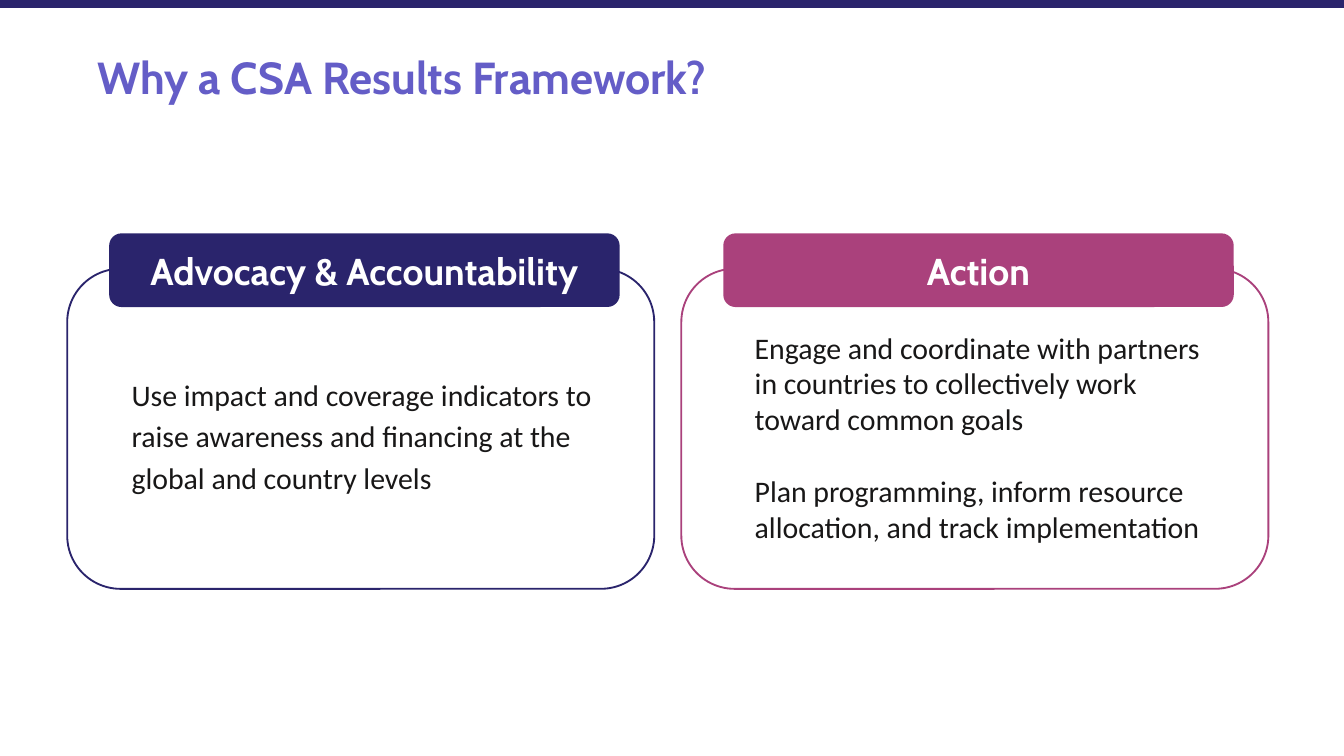
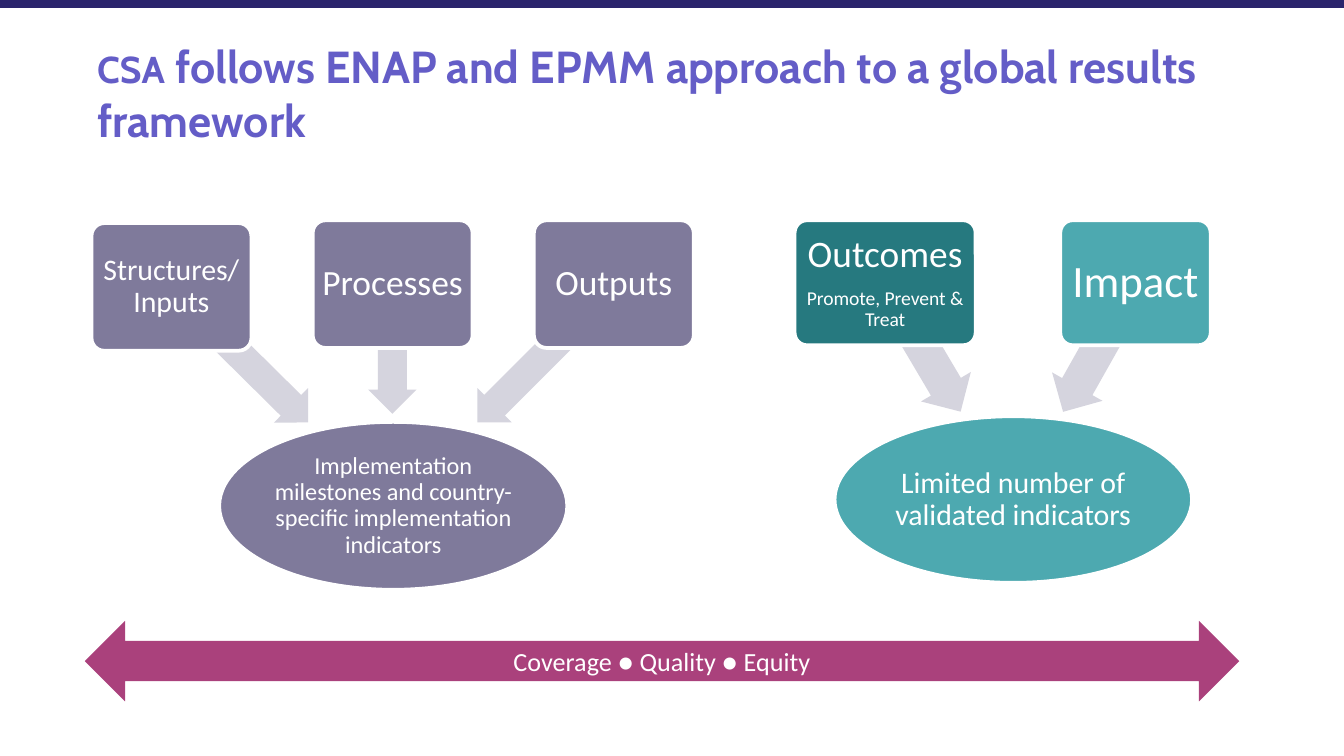
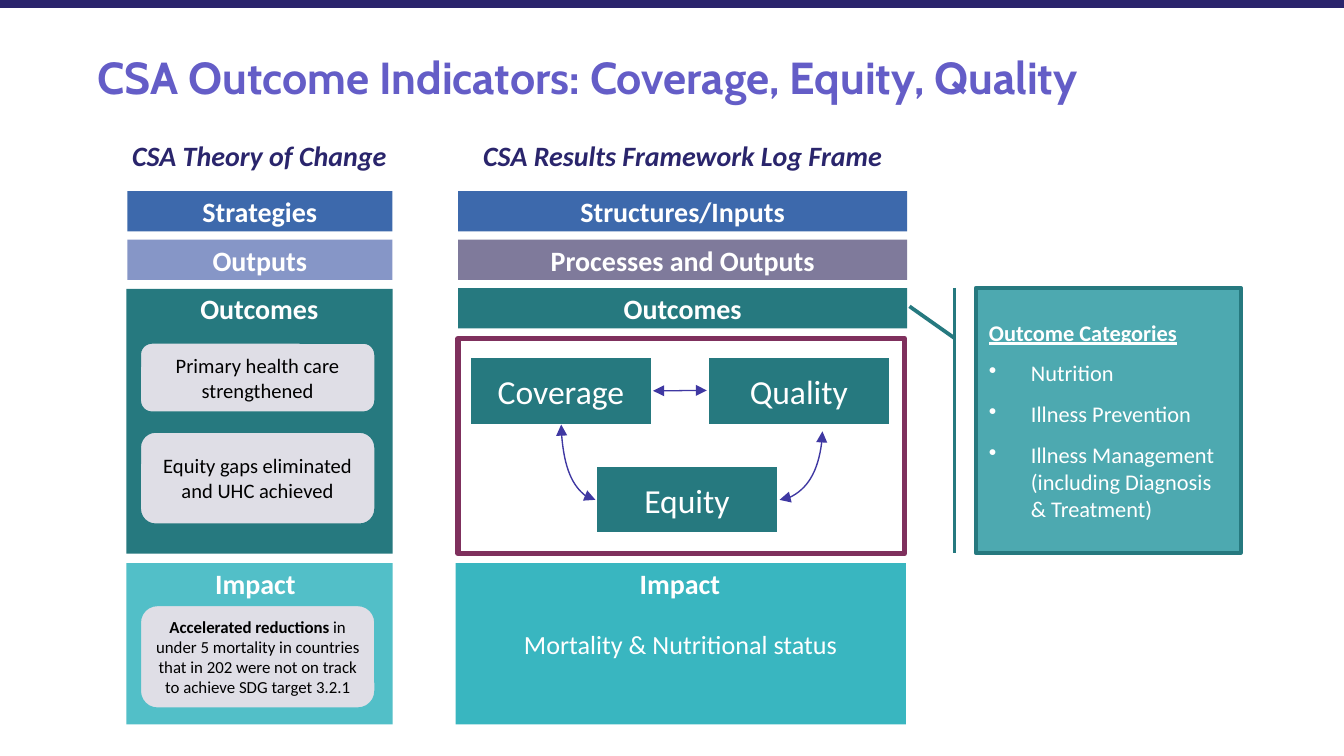
from dataclasses import dataclass
from typing import Optional

from lxml import etree
from pptx import Presentation
from pptx.dml.color import RGBColor
from pptx.enum.shapes import MSO_CONNECTOR, MSO_SHAPE
from pptx.enum.text import MSO_ANCHOR, PP_ALIGN
from pptx.oxml.ns import qn
from pptx.util import Pt

RECT = MSO_SHAPE.RECTANGLE
ROUND = MSO_SHAPE.ROUNDED_RECTANGLE
OVAL = MSO_SHAPE.OVAL
LEFT_ARROW = MSO_SHAPE.LEFT_ARROW
DOUBLE_ARROW = MSO_SHAPE.LEFT_RIGHT_ARROW
CALLOUT = MSO_SHAPE.LINE_CALLOUT_1_BORDER_AND_ACCENT_BAR
CURVE = MSO_CONNECTOR.CURVE
LEFT = PP_ALIGN.LEFT
CENTER = PP_ALIGN.CENTER
TOP = MSO_ANCHOR.TOP
MIDDLE = MSO_ANCHOR.MIDDLE

COLORS = {
    "white": "FFFFFF",
    "black": "000000",
    "ink": "181717",
    "navy": "2A246C",
    "heading": "2A256C",
    "title": "645DC7",
    "magenta": "AA417C",
    "plum": "7F305D",
    "mauve": "7F7A9B",
    "lilac": "D5D4DE",
    "pale": "DFDEE6",
    "teal": "26797F",
    "aqua": "4DA9B0",
    "cyan": "39B6C0",
    "light_cyan": "53BFC8",
    "blue": "3D69AC",
    "periwinkle": "8696C7",
    "indigo": "3F38A2",
}
HEAD_FONT = "Cabin"
BODY_FONT = "Calibri"
TIGHT = (5.2, 2.7, 5.2, 2.7)
WIDE = (7.2, 7.2, 7.2, 7.2)


@dataclass
class Run:
    text: str
    size: float
    color: str = "white"
    bold: bool = False
    italic: bool = False
    underline: bool = False
    font: str = BODY_FONT


@dataclass
class Para:
    runs: tuple[Run, ...]
    align: PP_ALIGN = CENTER
    before: float = 0
    after: float = 0
    spacing: float = 1.0
    indent: float = 0
    bullet: bool = False


@dataclass
class Box:
    x: float
    y: float
    w: float
    h: float
    kind: Optional[MSO_SHAPE] = None
    fill: Optional[str] = None
    line: Optional[str] = None
    weight: float = 1
    adj: tuple[float, ...] = ()
    rotation: float = 0
    alpha: int = 100
    paras: tuple[Para, ...] = ()
    inset: tuple[float, ...] = (7.2, 3.6, 7.2, 3.6)


@dataclass
class Curve:
    x1: float
    y1: float
    x2: float
    y2: float
    preset: str


def rgb(name: str) -> RGBColor:
    return RGBColor.from_string(COLORS[name])


def single(run: Run, **layout) -> tuple[Para, ...]:
    return (Para((run,), **layout),)


def write_para(p, para: Para) -> None:
    p.alignment = para.align
    p.line_spacing = para.spacing
    p.space_before = Pt(para.before)
    p.space_after = Pt(para.after)
    pPr = p._p.get_or_add_pPr()
    pPr.set("marL", str(Pt(para.indent)))
    pPr.set("indent", str(-Pt(para.indent) if para.bullet else 0))
    if para.bullet:
        etree.SubElement(pPr, qn("a:buChar")).set("char", "•")
    for run in para.runs:
        r = p.add_run()
        r.text = run.text
        r.font.name = run.font
        r.font.size = Pt(run.size)
        r.font.bold = run.bold
        r.font.italic = run.italic
        r.font.underline = run.underline
        r.font.color.rgb = rgb(run.color)


def write_text(tf, box: Box) -> None:
    tf.word_wrap = True
    tf.vertical_anchor = MIDDLE if box.kind else TOP
    tf.margin_left, tf.margin_top, tf.margin_right, tf.margin_bottom = map(Pt, box.inset)
    for i, para in enumerate(box.paras):
        write_para(tf.add_paragraph() if i else tf.paragraphs[0], para)


def draw_box(s, box: Box) -> None:
    place = [Pt(v) for v in (box.x, box.y, box.w, box.h)]
    if box.kind is None:
        write_text(s.shapes.add_textbox(*place).text_frame, box)
        return
    sp = s.shapes.add_shape(box.kind, *place)
    sp.shadow.inherit = False
    sp.rotation = box.rotation
    for i, value in enumerate(box.adj):
        sp.adjustments[i] = value
    if box.fill:
        sp.fill.solid()
        sp.fill.fore_color.rgb = rgb(box.fill)
    else:
        sp.fill.background()
    if box.alpha < 100:
        color = sp.element.spPr.find(qn("a:solidFill"))[0]
        etree.SubElement(color, qn("a:alpha")).set("val", str(box.alpha * 1000))
    if box.line:
        sp.line.color.rgb = rgb(box.line)
        sp.line.width = Pt(box.weight)
    else:
        sp.line.fill.background()
    if box.paras:
        write_text(sp.text_frame, box)


def draw_curve(s, curve: Curve) -> None:
    cx = s.shapes.add_connector(CURVE, Pt(curve.x1), Pt(curve.y1), Pt(curve.x2), Pt(curve.y2))
    cx.line.color.rgb = rgb("indigo")
    cx.line.width = Pt(0.75)
    spPr = cx.element.spPr
    spPr.find(qn("a:prstGeom")).set("prst", curve.preset)
    ln = spPr.find(qn("a:ln"))
    for end in ("a:headEnd", "a:tailEnd"):
        etree.SubElement(ln, qn(end)).set("type", "triangle")
    etree.SubElement(spPr, qn("a:effectLst"))


def draw_all(s, boxes: list[Box]) -> None:
    for box in boxes:
        draw_box(s, box)


def title_run(text: str, size: float = 24) -> Run:
    return Run(text, size, "title", bold=True, font=HEAD_FONT)


def new_slide(prs, y: float, *runs: Run):
    s = prs.slides.add_slide(prs.slide_layouts[6])
    draw_all(s, [
        Box(0, 0, 720, 4.3, RECT, "navy"),
        Box(45, y, 628, 45, paras=(Para(runs, LEFT),), inset=WIDE),
    ])
    return s


def build_reasons(prs) -> None:
    s = new_slide(prs, 19.5, title_run("Why a CSA Results Framework?"))
    cards = [("Advocacy & Accountability", "navy"), ("Action", "magenta")]
    for i, (heading, color) in enumerate(cards):
        x = 36 + 329 * i
        draw_all(s, [
            Box(x, 144, 314.5, 171.5, ROUND, line=color),
            Box(x + 22.5, 125, 273.5, 39.5, ROUND, color,
                paras=single(Run(heading, 20, bold=True, font=HEAD_FONT))),
        ])
    advocacy = single(
        Run("Use impact and coverage indicators to raise awareness and financing "
            "at the global and country levels", 16, "ink"),
        align=LEFT, spacing=1.15, indent=13)
    action = (
        Para((Run("Engage and coordinate with partners in countries to collectively "
                  "work toward common goals", 16, "ink"),), LEFT, indent=13),
        Para((Run("Plan programming, inform resource allocation, and track "
                  "implementation", 16, "ink"),), LEFT, before=19.5, indent=13),
    )
    draw_all(s, [
        Box(50.4, 175, 277, 142.5, paras=advocacy, inset=(7.2, 24, 7.2, 7.2)),
        Box(384.2, 172.8, 275, 142.5, paras=action),
    ])


def node(x: float, y: float, w: float, h: float, fill: str, *runs: Run) -> Box:
    last = len(runs) - 1
    paras = tuple(Para((run,), spacing=0.9, after=7 if i < last else 0)
                  for i, run in enumerate(runs))
    return Box(x, y, w, h, ROUND, fill, "white", 2, (0.1,), paras=paras, inset=(2.5,) * 4)


def hub(x: float, y: float, w: float, h: float, fill: str, run: Run) -> Box:
    return Box(x, y, w, h, OVAL, fill, "white", 2,
               paras=single(run, spacing=0.9), inset=(1,) * 4)


def feeder(x: float, y: float, w: float, h: float, rotation: float) -> Box:
    return Box(x, y, w, h, LEFT_ARROW, "lilac", adj=(0.6, 0.5), rotation=rotation)


def build_approach(prs) -> None:
    s = new_slide(prs, 13.7, title_run("CSA", 20),
                  title_run(" follows ENAP and EPMM approach to a global results framework"))
    draw_all(s, [
        hub(117.4, 226, 186.5, 90, "mauve",
            Run("Implementation milestones and country-specific implementation indicators", 13)),
        feeder(77, 177.1, 103, 26, 224.7),
        feeder(175.7, 174.2, 69, 26, 270),
        feeder(240.5, 176.4, 104.4, 26, 315),
    ])
    inputs = [("Structures/Inputs", 16, 119.5), ("Processes", 19, 118), ("Outputs", 19, 118)]
    for i, (label, size, y) in enumerate(inputs):
        draw_box(s, node(49 + 118.5 * i, y, 85.7, 68.4, "mauve", Run(label, size)))
    draw_all(s, [
        hub(447.1, 223, 191.5, 89.3, "aqua", Run("Limited number of validated indicators", 16)),
        feeder(454.3, 170.6, 80, 31, 239.4),
        feeder(549.4, 170.6, 79.2, 31, 299.4),
        node(425.7, 118, 97, 67, "teal", Run("Outcomes", 20),
             Run("Promote, Prevent & Treat", 10.5)),
        node(568, 118, 80.6, 67, "aqua", Run("Impact", 24)),
        Box(45.4, 332.6, 618.5, 43.2, DOUBLE_ARROW, "magenta",
            paras=single(Run("Coverage ● Quality ● Equity", 14))),
    ])


def heading(text: str, color: str = "white", italic: bool = False) -> tuple[Para, ...]:
    return single(Run(text, 15, color, bold=True, italic=italic))


def note(y: float, h: float, line: str, *runs: Run) -> Box:
    return Box(75.2, y, 125.7, h, ROUND, "pale", line, 0.75, paras=(Para(runs),), inset=TIGHT)


def build_indicators(prs) -> None:
    s = new_slide(prs, 19.5, title_run("CSA Outcome Indicators: Coverage, Equity, Quality"))
    columns = [
        (68.2, 142, [("Strategies", "blue"), ("Outputs", "periwinkle")]),
        (245.5, 240.5, [("Structures/Inputs", "blue"), ("Processes and Outputs", "mauve"),
                        ("Outcomes", "teal")]),
    ]
    for x, w, rows in columns:
        for i, (label, color) in enumerate(rows):
            draw_box(s, Box(x, 102.4 + 26 * i, w, 21.6, RECT, color,
                            paras=heading(label), inset=TIGHT))

    draw_all(s, [
        Box(58.3, 71.3, 161.3, 23.8, inset=TIGHT,
            paras=heading("CSA Theory of Change", "heading", True)),
        Box(245.5, 71.3, 240.5, 23.8, inset=TIGHT,
            paras=heading("CSA Results Framework Log Frame", "heading", True)),
        Box(244.1, 301.7, 241.2, 86.4, RECT, "cyan", inset=TIGHT,
            paras=single(Run("Mortality & Nutritional status", 14))),
        Box(281.5, 300.2, 165.6, 25.2, paras=heading("Impact")),
        Box(245.5, 181.4, 239, 115.2, RECT, line="plum", weight=3),
    ])
    for label, x, y in [("Coverage", 251.5, 191), ("Quality", 379, 191), ("Equity", 319, 249.3)]:
        draw_box(s, Box(x, y, 98, 36.7, RECT, "teal", "white", 1.5,
                        paras=single(Run(label, 18)), inset=TIGHT))
    for curve in [
        Curve(319, 267.8, 300.7, 227.5, "curvedConnector2"),
        Curve(349.9, 209.4, 378.7, 209.2, "curvedConnector3"),
        Curve(417.6, 267.8, 440.6, 231.1, "curvedConnector2"),
    ]:
        draw_curve(s, curve)

    draw_all(s, [
        Box(67.7, 154.8, 142.6, 141.8, RECT, "teal"),
        Box(76.3, 153.4, 125.3, 23.8, paras=heading("Outcomes"), inset=TIGHT),
        note(183.8, 37, "teal", Run("Primary health care strengthened", 11, "black")),
        note(231.5, 49.3, "teal", Run("Equity gaps eliminated and UHC achieved", 11, "black")),
        Box(67.7, 301.7, 142.6, 86.4, RECT, "cyan", alpha=87),
        Box(74.2, 301, 125.3, 23.8, paras=heading("Impact"), inset=TIGHT),
        note(324.4, 55, "light_cyan",
             Run("Accelerated reductions ", 9, "black", bold=True),
             Run("in under 5 mortality in countries that in 202 were not on track "
                 "to achieve SDG target 3.2.1", 9, "black")),
    ])
    categories = ["Nutrition", "Illness Prevention",
                  "Illness Management (including Diagnosis & Treatment)"]
    paras = single(Run("Outcome Categories", 12, bold=True, underline=True), align=LEFT)
    paras += tuple(Para((Run(text, 12),), LEFT, before=7.5, indent=22.5, bullet=True)
                   for text in categories)
    draw_box(s, Box(522.7, 154.2, 142, 142, CALLOUT, "aqua", "teal", 2,
                    (0.19, -0.08, 0.07, -0.25), paras=paras))


def main() -> None:
    prs = Presentation()
    prs.slide_width, prs.slide_height = Pt(720), Pt(405)
    build_reasons(prs)
    build_approach(prs)
    build_indicators(prs)
    prs.save("out.pptx")


if __name__ == "__main__":
    main()
